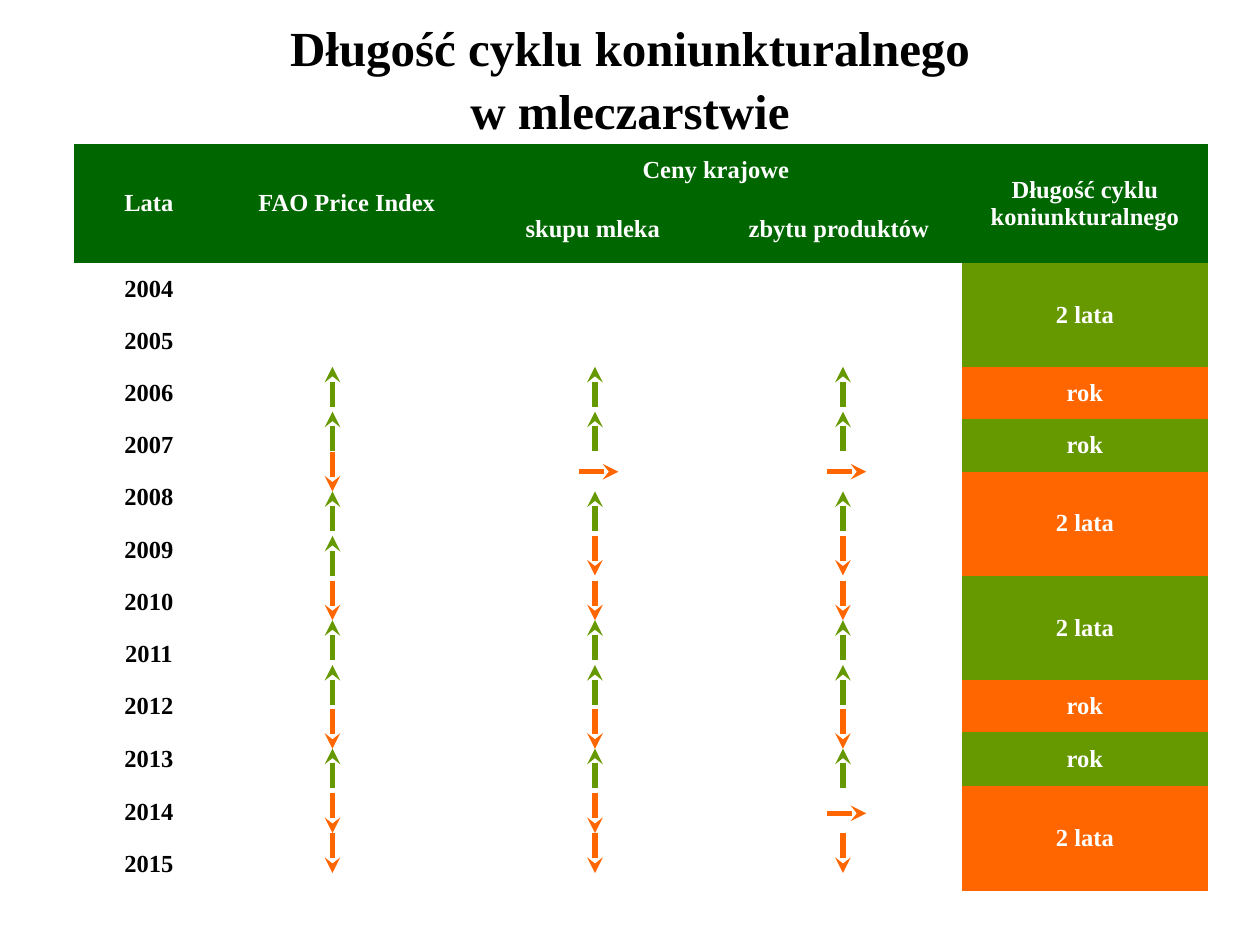
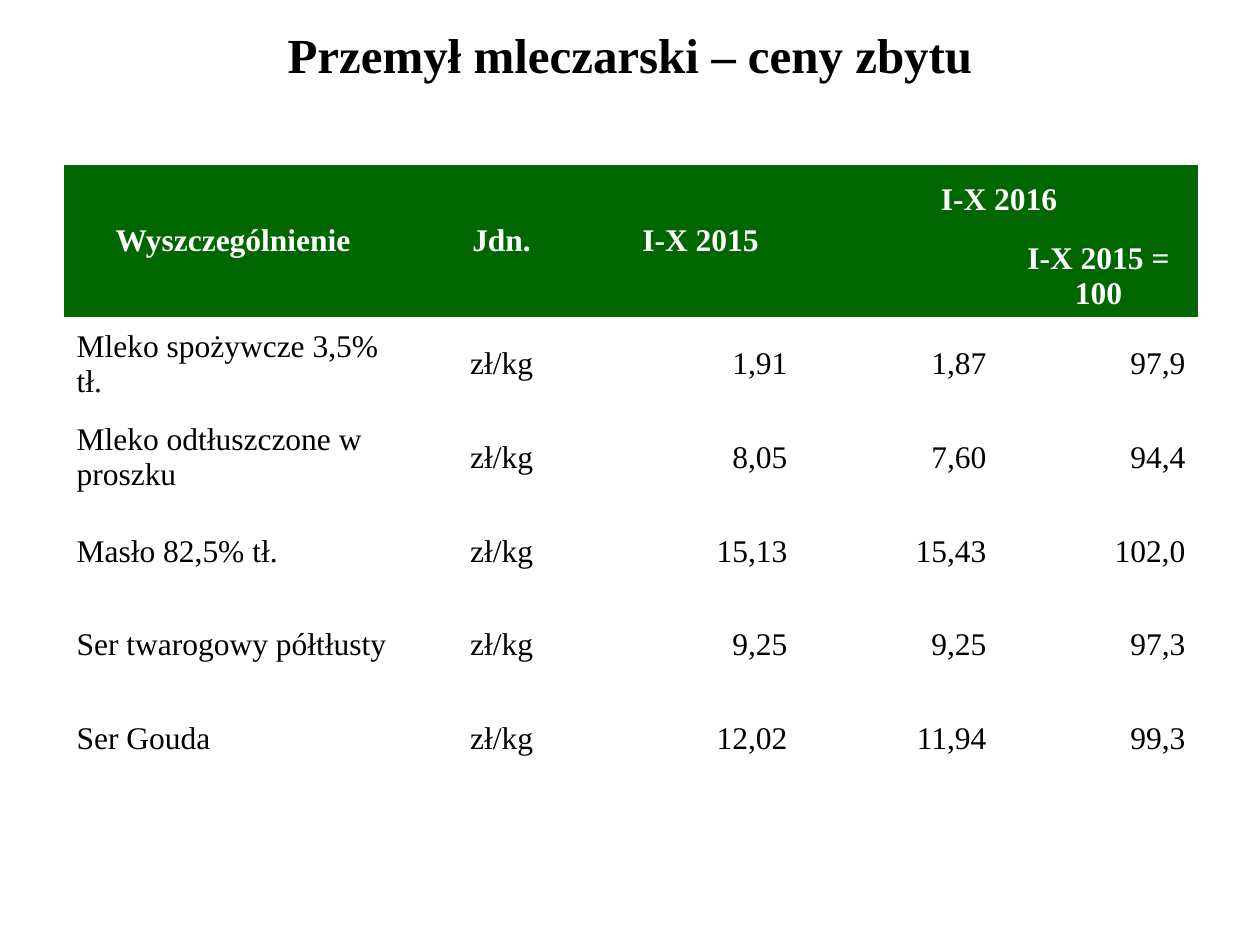
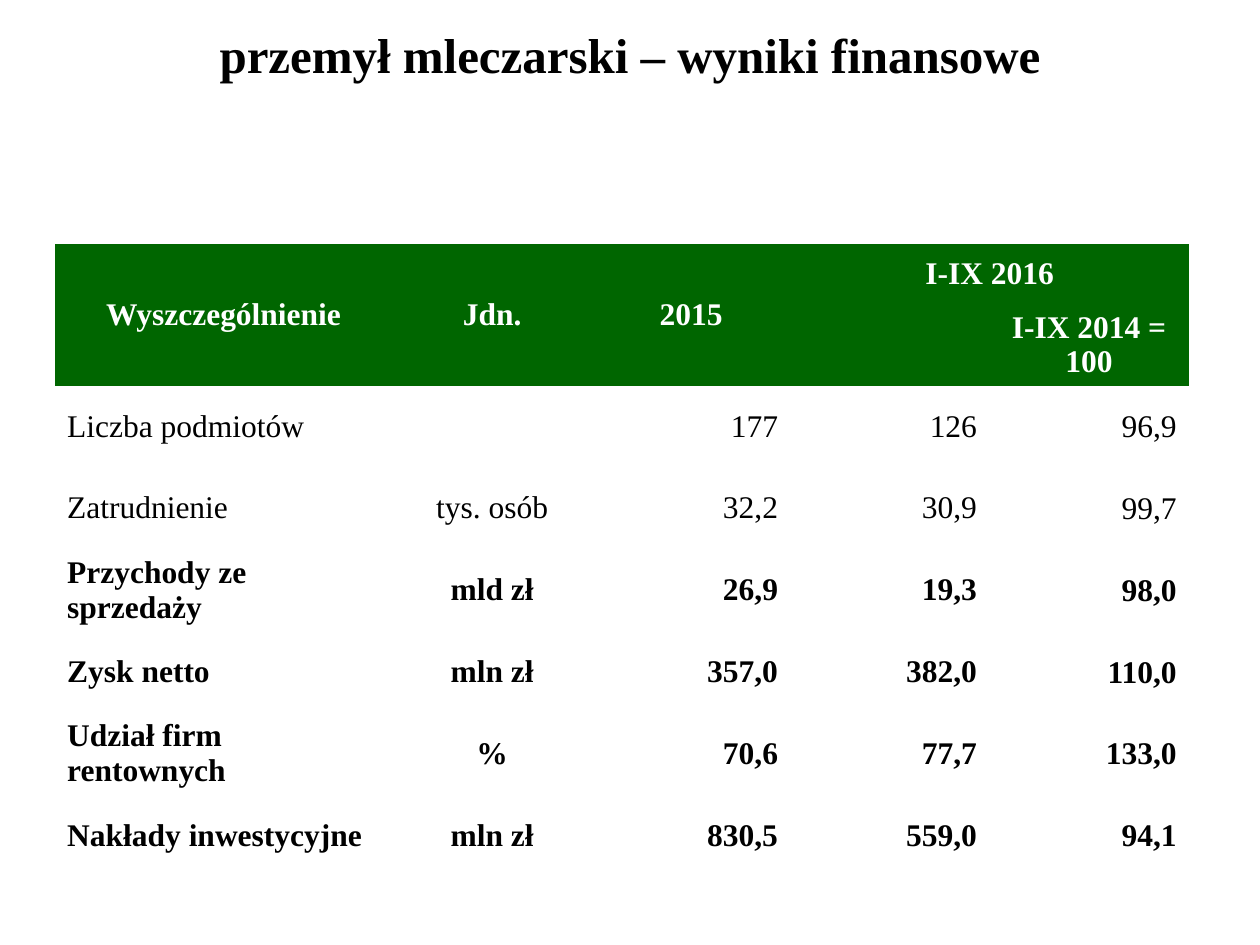
from copy import deepcopy
from itertools import cycle

from lxml.etree import SubElement
from pptx import Presentation
from pptx.dml.color import RGBColor
from pptx.enum.shapes import MSO_CONNECTOR
from pptx.enum.text import MSO_ANCHOR as Anchor, MSO_AUTO_SIZE as AutoSize, PP_ALIGN as Align
from pptx.oxml.ns import qn
from pptx.util import Pt

FONT = "Times New Roman"
BLACK = RGBColor(0x00, 0x00, 0x00)
WHITE = RGBColor(0xFF, 0xFF, 0xFF)
DARK_GREEN = RGBColor(0x00, 0x66, 0x00)
GREEN = RGBColor(0x66, 0x99, 0x00)
ORANGE = RGBColor(0xFF, 0x66, 0x00)

PLAIN_TABLE_STYLE = "{2D5ABB26-0587-4C30-8999-92F81FD0307C}"
TABLE_WIDTH = 648
ARROW_LENGTH = 22.7

UP, DOWN, RIGHT = "u", "d", "r"
ARROW_COLUMNS = {190: "uuduuduududd", 340: "uurudduududd", 481.7: "uurudduududrd"[:10] + "rd"}
ARROW_TOPS = [209.6, 235.2, 258.2, 280.8, 306.2, 331.8,
              354.4, 380, 405.2, 427.8, 453.4, 476.2]
CYCLES = [("2 lata", 2), ("rok", 1), ("rok", 1), ("2 lata", 2),
          ("2 lata", 2), ("rok", 1), ("rok", 1), ("2 lata", 2)]

SALE_PRICES = [
    ("Mleko spożywcze 3,5% tł.", "zł/kg", "1,91", "1,87", "97,9"),
    ("Mleko odtłuszczone w proszku", "zł/kg", "8,05", "7,60", "94,4"),
    ("Masło 82,5% tł.", "zł/kg", "15,13", "15,43", "102,0"),
    ("Ser twarogowy półtłusty", "zł/kg", "9,25", "9,25", "97,3"),
    ("Ser Gouda", "zł/kg", "12,02", "11,94", "99,3"),
]
FINANCIAL_RESULTS = [
    ("Liczba podmiotów", "", "177", "126", "96,9"),
    ("Zatrudnienie", "tys. osób", "32,2", "30,9", "99,7"),
    ("Przychody ze sprzedaży", "mld zł", "26,9", "19,3", "98,0"),
    ("Zysk netto", "mln zł", "357,0", "382,0", "110,0"),
    ("Udział firm rentownych", "%", "70,6", "77,7", "133,0"),
    ("Nakłady inwestycyjne", "mln zł", "830,5", "559,0", "94,1"),
]


def write(text_frame, text, size=18, color=BLACK, bold=True, align=Align.CENTER, spacing=None):
    paragraph = text_frame.paragraphs[0]
    paragraph.alignment = align
    if spacing:
        paragraph.line_spacing = spacing
    for index, line in enumerate(text.split("\n")):
        if index:
            paragraph.add_line_break()
        run = paragraph.add_run()
        run.text = line
        run.font.name = FONT
        run.font.size = Pt(size)
        run.font.bold = bold
        run.font.color.rgb = color
    for line_break in paragraph._p.findall(qn("a:br")):
        line_break.append(deepcopy(run._r.find(qn("a:rPr"))))


class Deck:
    def __init__(self):
        self.presentation = Presentation()
        self.presentation.slide_width = Pt(720)
        self.presentation.slide_height = Pt(540)
        self.slide = None

    def new_slide(self, title, top=9.4, height=39.6):
        self.slide = self.presentation.slides.add_slide(self.presentation.slide_layouts[5])
        shape = self.slide.shapes.title
        shape.left, shape.top, shape.width, shape.height = Pt(36), Pt(top), Pt(648), Pt(height)
        shape.text_frame.auto_size = AutoSize.NONE
        shape.text_frame.vertical_anchor = Anchor.MIDDLE
        write(shape.text_frame, title, size=28, spacing=1.08)

    def table(self, left, top, column_width, row_heights):
        """Add a white table with equal columns; the first takes the remaining width."""
        widths = [TABLE_WIDTH - 4 * column_width] + [column_width] * 4
        frame = self.slide.shapes.add_table(len(row_heights), len(widths), Pt(left), Pt(top),
                                            Pt(TABLE_WIDTH), Pt(sum(row_heights)))
        table = frame.table
        table.first_row = table.horz_banding = False
        table._tbl.tblPr.find(qn("a:tableStyleId")).text = PLAIN_TABLE_STYLE
        for column, width in zip(table.columns, widths):
            column.width = Pt(width)
        for row, height in zip(table.rows, row_heights):
            row.height = Pt(height)
        for cell in table.iter_cells():
            self.cell(cell, "", WHITE)
        return table

    def cell(self, cell, text, fill=None, **text_format):
        cell.vertical_anchor = Anchor.MIDDLE
        if fill is not None:
            cell.fill.solid()
            cell.fill.fore_color.rgb = fill
        if text:
            write(cell.text_frame, text, **text_format)

    def header(self, table, labels, group_column, group_label, sublabels, size=18):
        """Fill two heading rows; labels maps columns to texts that take both rows."""
        texts = {(0, column): label for column, label in labels.items()}
        texts[0, group_column] = group_label
        for offset, label in enumerate(sublabels):
            texts[1, group_column + offset] = label
        for row in range(2):
            for column in range(len(table.columns)):
                self.cell(table.cell(row, column), texts.get((row, column), ""),
                          DARK_GREEN, size=size, color=WHITE)
        for column in labels:
            table.cell(0, column).merge(table.cell(1, column))
        table.cell(0, group_column).merge(table.cell(0, group_column + 1))

    def arrow(self, center, top, direction):
        bottom, middle = top + ARROW_LENGTH, top + ARROW_LENGTH / 2
        left = center + 2 - ARROW_LENGTH / 2
        ends = {UP: (center, bottom, center, top),
                DOWN: (center, top, center, bottom),
                RIGHT: (left, middle, left + ARROW_LENGTH, middle)}[direction]
        connector = self.slide.shapes.add_connector(MSO_CONNECTOR.STRAIGHT, *map(Pt, ends))
        connector.line.width = Pt(3)
        connector.line.color.rgb = GREEN if direction == UP else ORANGE
        properties = connector._element.spPr
        SubElement(properties.find(qn("a:ln")), qn("a:tailEnd"), type="stealth")
        SubElement(properties, qn("a:effectLst"))

    def results_table(self, left, top, header_height, row_height, periods, rows, plain_rows,
                      tight_last_column=False):
        """Add a table of items; rows after the first plain_rows are bold."""
        base, current, index = periods
        table = self.table(left, top, 113.7, [header_height] * 2 + [row_height] * len(rows))
        self.header(table, {0: "Wyszczególnienie", 1: "Jdn.", 2: base}, 3, current, ["", index])
        alignments = [Align.LEFT, Align.CENTER] + [Align.RIGHT] * 3
        for number, values in enumerate(rows):
            for column, (value, align) in enumerate(zip(values, alignments)):
                self.cell(table.cell(number + 2, column), value,
                          align=align, bold=number >= plain_rows)
            if tight_last_column:
                cell = table.cell(number + 2, 4)
                cell.margin_left = cell.margin_top = Pt(0.7)
                cell.margin_right, cell.margin_bottom = Pt(6.8), Pt(0)


def add_cycle_slide(deck):
    deck.new_slide("Długość cyklu koniunkturalnego\nw mleczarstwie", top=15.1, height=56.9)
    years = range(2004, 2016)
    heights = [29.8] * 2 + [30.9 if year == 2013 else 29.8 for year in years]
    table = deck.table(42.3, 82.3, 140.6, heights)
    labels = {0: "Lata", 1: "FAO Price Index", 4: "Długość cyklu koniunkturalnego"}
    deck.header(table, labels, 2, "Ceny krajowe", ["skupu mleka", "zbytu produktów"], size=14)
    for row, year in enumerate(years, start=2):
        deck.cell(table.cell(row, 0), str(year), size=14)
    row = 2
    for (label, length), fill in zip(CYCLES, cycle([GREEN, ORANGE])):
        cell = table.cell(row, 4)
        deck.cell(cell, label, fill, size=14, color=WHITE)
        if length > 1:
            cell.merge(table.cell(row + length - 1, 4))
        row += length
    for center, directions in ARROW_COLUMNS.items():
        for top, direction in zip(ARROW_TOPS, directions):
            deck.arrow(center, top, direction)


def main():
    deck = Deck()
    add_cycle_slide(deck)
    deck.new_slide("Przemył mleczarski – ceny zbytu")
    deck.results_table(36.6, 94.3, 39.8, 53.6, ("I-X 2015", "I-X 2016", "I-X 2015 = 100"),
                       SALE_PRICES, plain_rows=len(SALE_PRICES))
    deck.new_slide("przemył mleczarski – wyniki finansowe")
    deck.results_table(31.2, 139.6, 33.9, 46.5, ("2015", "I-IX 2016", "I-IX 2014 = 100"),
                       FINANCIAL_RESULTS, plain_rows=2, tight_last_column=True)
    deck.presentation.save("out.pptx")


if __name__ == "__main__":
    main()
